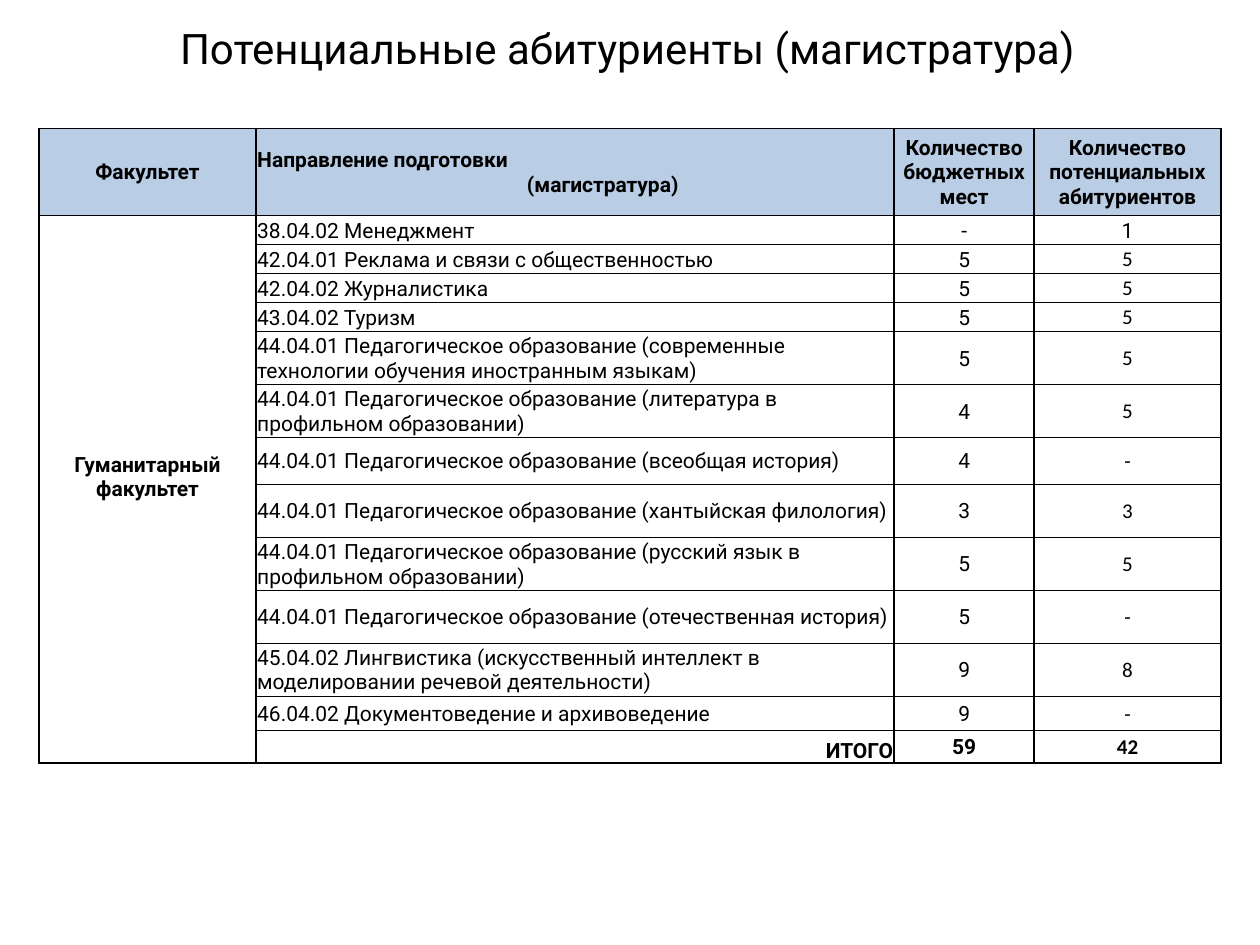
from dataclasses import dataclass

from lxml import etree
from pptx import Presentation
from pptx.dml.color import RGBColor
from pptx.enum.text import MSO_ANCHOR, PP_ALIGN
from pptx.oxml.ns import qn
from pptx.util import Inches, Pt

LEFT, CENTER, RIGHT = PP_ALIGN.LEFT, PP_ALIGN.CENTER, PP_ALIGN.RIGHT
MIDDLE, BOTTOM = MSO_ANCHOR.MIDDLE, MSO_ANCHOR.BOTTOM


@dataclass(frozen=True)
class Theme:
    text: str = "000000"
    header: str = "B9CDE5"
    border: str = "000000"
    font: str = "Roboto"
    number_font: str = "Calibri"
    title_size: int = 24
    table_size: int = 12
    border_width: int = 1


THEME = Theme()
TITLE = "Потенциальные абитуриенты (магистратура)"
FACULTY = "Гуманитарный факультет"
HEADERS = [
    "Факультет",
    "Направление подготовки\n(магистратура)",
    "Количество бюджетных мест",
    "Количество потенциальных абитуриентов",
]
PROGRAMMES = [
    ("38.04.02 Менеджмент", "-", "1"),
    ("42.04.01 Реклама и связи с общественностью", "5", "5"),
    ("42.04.02 Журналистика", "5", "5"),
    ("43.04.02 Туризм", "5", "5"),
    ("44.04.01 Педагогическое образование (современные технологии обучения иностранным языкам)", "5", "5"),
    ("44.04.01 Педагогическое образование (литература в профильном образовании)", "4", "5"),
    ("44.04.01 Педагогическое образование (всеобщая история)", "4", "-"),
    ("44.04.01 Педагогическое образование (хантыйская филология)", "3", "3"),
    ("44.04.01 Педагогическое образование (русский язык в профильном образовании)", "5", "5"),
    ("44.04.01 Педагогическое образование (отечественная история)", "5", "-"),
    ("45.04.02 Лингвистика (искусственный интеллект в моделировании речевой деятельности)", "9", "8"),
    ("46.04.02 Документоведение и архивоведение", "9", "-"),
]
TOTALS = ("ИТОГО", "59", "42")
COLUMN_WIDTHS = [1.72, 5.06, 1.11, 1.48]
ROW_HEIGHTS = [0.69] + [0.23] * 4 + [0.42] * 2 + [0.37] + [0.42] * 4 + [0.27, 0.26]


def write_text(text_frame, text, *, size, font=THEME.font, bold=False, align=LEFT):
    text_frame.word_wrap = True
    text_frame.text = text
    for paragraph in text_frame.paragraphs:
        paragraph.alignment = align
        paragraph.font.size = Pt(size)
        paragraph.font.name = font
        paragraph.font.bold = bold
        paragraph.font.color.rgb = RGBColor.from_string(THEME.text)


def add_borders(cell):
    properties = cell._tc.get_or_add_tcPr()
    for side in ("a:lnL", "a:lnR", "a:lnT", "a:lnB"):
        line = etree.SubElement(properties, qn(side), w=str(Pt(THEME.border_width)))
        fill = etree.SubElement(line, qn("a:solidFill"))
        etree.SubElement(fill, qn("a:srgbClr"), val=THEME.border)


def fill_cell(cell, text, *, fill=None, anchor=MIDDLE, **text_format):
    cell.margin_left = cell.margin_right = cell.margin_top = Inches(0.01)
    cell.margin_bottom = 0
    cell.vertical_anchor = anchor
    write_text(cell.text_frame, text, size=THEME.table_size, **text_format)
    add_borders(cell)
    if fill:
        cell.fill.solid()
        cell.fill.fore_color.rgb = RGBColor.from_string(fill)
    else:
        cell.fill.background()


def place_title(slide, left, top, width, height):
    title = slide.shapes.title
    title.left, title.top, title.width, title.height = left, top, width, height
    title.text_frame.vertical_anchor = MIDDLE
    write_text(title.text_frame, TITLE, size=THEME.title_size, align=CENTER)


def fill_header(table):
    for column, header in enumerate(HEADERS):
        fill_cell(table.cell(0, column), header, fill=THEME.header, bold=True, align=CENTER)
    first, second = table.cell(0, 1).text_frame.paragraphs
    first.alignment = LEFT
    second._p.get_or_add_pPr().set("marL", str(Inches(0.44)))


def fill_faculty(table, last_row):
    for row in range(1, last_row + 1):
        fill_cell(table.cell(row, 0), "")
    faculty = table.cell(1, 0)
    faculty.merge(table.cell(last_row, 0))
    write_text(faculty.text_frame, FACULTY, size=THEME.table_size, bold=True, align=CENTER)
    faculty.margin_bottom = Inches(0.2)


def fill_row(table, row, values, *, bold=False, name_align=LEFT, name_anchor=MIDDLE):
    name, places, applicants = values
    applicant_font = THEME.font if row == 1 else THEME.number_font
    fill_cell(table.cell(row, 1), name, bold=bold, align=name_align, anchor=name_anchor)
    fill_cell(table.cell(row, 2), places, bold=bold, align=CENTER)
    fill_cell(table.cell(row, 3), applicants, bold=bold, align=CENTER, font=applicant_font)


def place_table(slide, left, top, width, height):
    frame = slide.shapes.add_table(len(ROW_HEIGHTS), len(COLUMN_WIDTHS), left, top, width, height)
    table = frame.table
    table.first_row = table.horz_banding = False
    for column, share in zip(table.columns, COLUMN_WIDTHS):
        column.width = int(width * share / sum(COLUMN_WIDTHS))
    for row, share in zip(table.rows, ROW_HEIGHTS):
        row.height = int(height * share / sum(ROW_HEIGHTS))
    last_row = len(ROW_HEIGHTS) - 1
    fill_header(table)
    fill_faculty(table, last_row)
    for row, programme in enumerate(PROGRAMMES, start=1):
        fill_row(table, row, programme)
    fill_row(table, last_row, TOTALS, bold=True, name_align=RIGHT, name_anchor=BOTTOM)


def main():
    presentation = Presentation()
    presentation.slide_width, presentation.slide_height = Inches(10), Inches(7.5)
    slide = presentation.slides.add_slide(presentation.slide_layouts[5])
    place_title(slide, Inches(0), Inches(0), Inches(9.96), Inches(0.76))
    place_table(slide, Inches(0.31), Inches(1.02), Inches(9.38), Inches(5.04))
    presentation.save("out.pptx")


if __name__ == "__main__":
    main()
